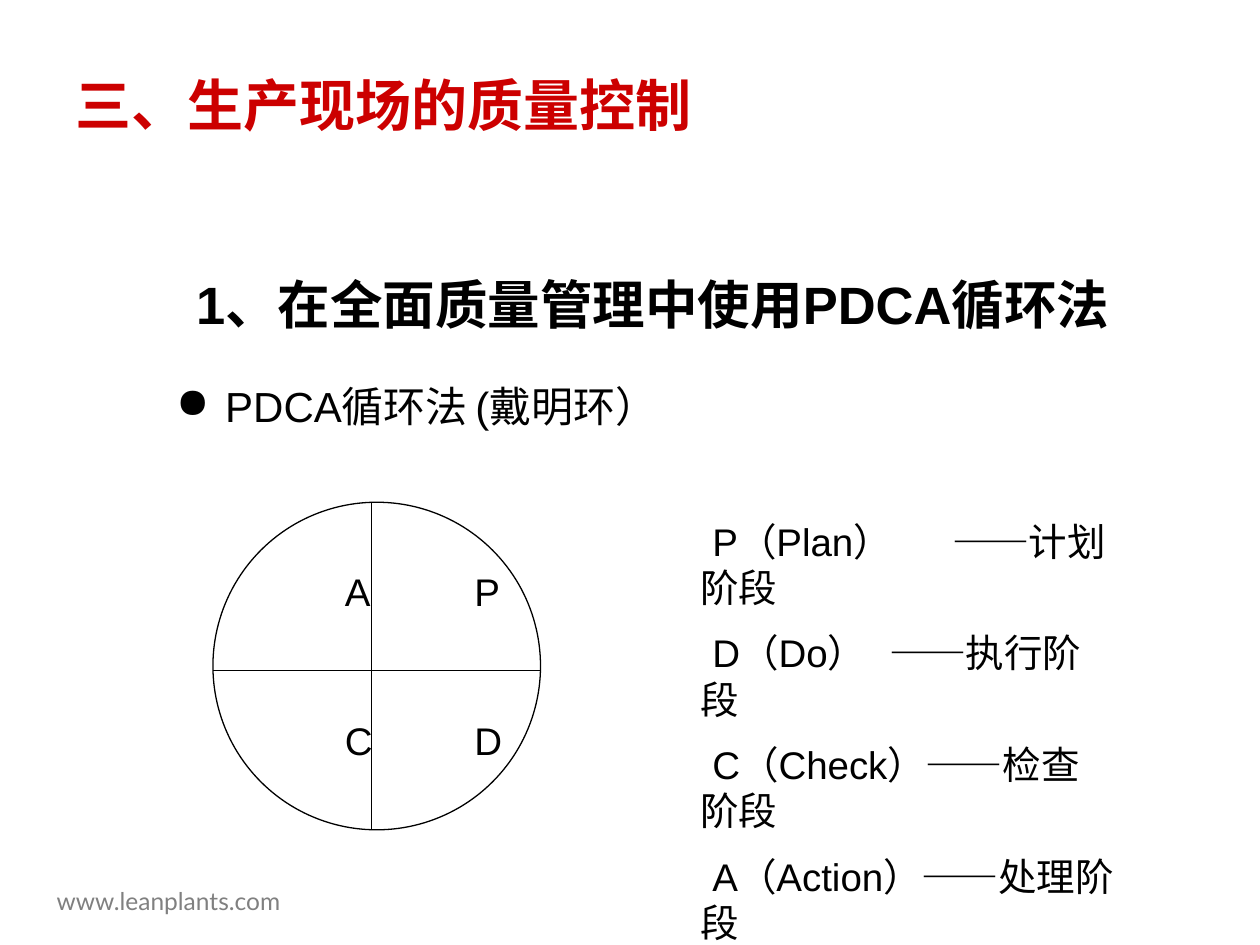
from lxml import etree
from pptx import Presentation
from pptx.dml.color import RGBColor
from pptx.enum.lang import MSO_LANGUAGE_ID
from pptx.enum.shapes import MSO_CONNECTOR, MSO_SHAPE
from pptx.enum.text import MSO_ANCHOR
from pptx.oxml.ns import qn
from pptx.util import Pt

STRAIGHT = MSO_CONNECTOR.STRAIGHT
OVAL = MSO_SHAPE.OVAL
TOP, MIDDLE = MSO_ANCHOR.TOP, MSO_ANCHOR.MIDDLE
CHINESE = MSO_LANGUAGE_ID.SIMPLIFIED_CHINESE
COLORS = {"title": "CC0000", "ink": "000000", "footer": "808080"}
LINE_WIDTH = 0.75


class PageBuilder:
    """Holds the style and the current slide; lengths are in points."""

    def __init__(self, page):
        self.page = page

    def color(self, name):
        return RGBColor.from_string(COLORS[name])

    def text(self, left, top, width, height, lines, size, color="ink", bold=False,
             font="Arial", anchor=TOP, wrap=True, gap=0, margin=0, indent=0,
             bullet=None, tab=None):
        box = self.page.shapes.add_textbox(Pt(left), Pt(top), Pt(width), Pt(height))
        frame = box.text_frame
        frame.word_wrap = wrap
        frame.vertical_anchor = anchor
        frame.text = "\n".join(lines)
        for index, para in enumerate(frame.paragraphs):
            if index:
                para.space_before = Pt(gap)
            self.layout(para, margin, indent, bullet, tab)
            for span in para.runs:
                span.font.name = font
                span.font.size = Pt(size)
                span.font.bold = bold
                span.font.color.rgb = self.color(color)
                span.font.language_id = CHINESE

    def layout(self, para, margin, indent, bullet, tab):
        props = para._p.get_or_add_pPr()
        props.set("marL", str(Pt(margin)))
        props.set("indent", str(Pt(indent)))
        if bullet:
            etree.SubElement(props, qn("a:buChar"), char=bullet)
        if tab:
            tabs = etree.SubElement(props, qn("a:tabLst"))
            etree.SubElement(tabs, qn("a:tab"), pos=str(Pt(tab)), algn="l")

    def circle(self, left, top, size):
        shape = self.page.shapes.add_shape(OVAL, Pt(left), Pt(top), Pt(size), Pt(size))
        shape.shadow.inherit = False
        shape.fill.background()
        self.outline(shape.line)

    def line(self, x1, y1, x2, y2):
        connector = self.page.shapes.add_connector(STRAIGHT, Pt(x1), Pt(y1), Pt(x2), Pt(y2))
        etree.SubElement(connector._element.spPr, qn("a:effectLst"))
        self.outline(connector.line)

    def outline(self, line):
        line.color.rgb = self.color("ink")
        line.width = Pt(LINE_WIDTH)


def main():
    deck = Presentation()
    deck.slide_width, deck.slide_height = Pt(720), Pt(540)
    builder = PageBuilder(deck.slides.add_slide(deck.slide_layouts[6]))

    # Headings and footer
    builder.text(36, 21.6, 648, 75.6, ["三、生产现场的质量控制"], 32, "title",
                 bold=True, anchor=MIDDLE)
    builder.text(105, 139.7, 553, 67.7, ["1、在全面质量管理中使用PDCA循环法"], 30,
                 bold=True, anchor=MIDDLE)
    builder.text(25.2, 502.6, 275, 24.5, ["www.leanplants.com"], 14, "footer", font="Lato")

    # Bullet above the wheel
    builder.text(93.6, 213.8, 583, 40, ["PDCA循环法\t(戴明环）"], 24,
                 margin=28, indent=-28, bullet="●", tab=171)

    # PDCA wheel
    left, top, size = 121.7, 287, 187.2
    cross_x, cross_y = 212.4, 383
    builder.circle(left, top, size)
    builder.line(left, cross_y, left + size, cross_y)
    builder.line(cross_x, top, cross_x, top + size)
    for row, letters in enumerate(("AP", "CD")):
        for column, letter in enumerate(letters):
            builder.text(190 + 74 * column, 321 + 85 * row, 34, 34, [letter], 22, wrap=False)

    # Stage list
    stages = [
        "P（Plan）\t——计划阶段",
        "D（Do）\t——执行阶段",
        "C（Check）——检查阶段",
        "A（Action）——处理阶段",
    ]
    builder.text(393, 292.3, 251, 250, stages, 22, gap=11, indent=7, tab=141)

    deck.save("out.pptx")


if __name__ == "__main__":
    main()
